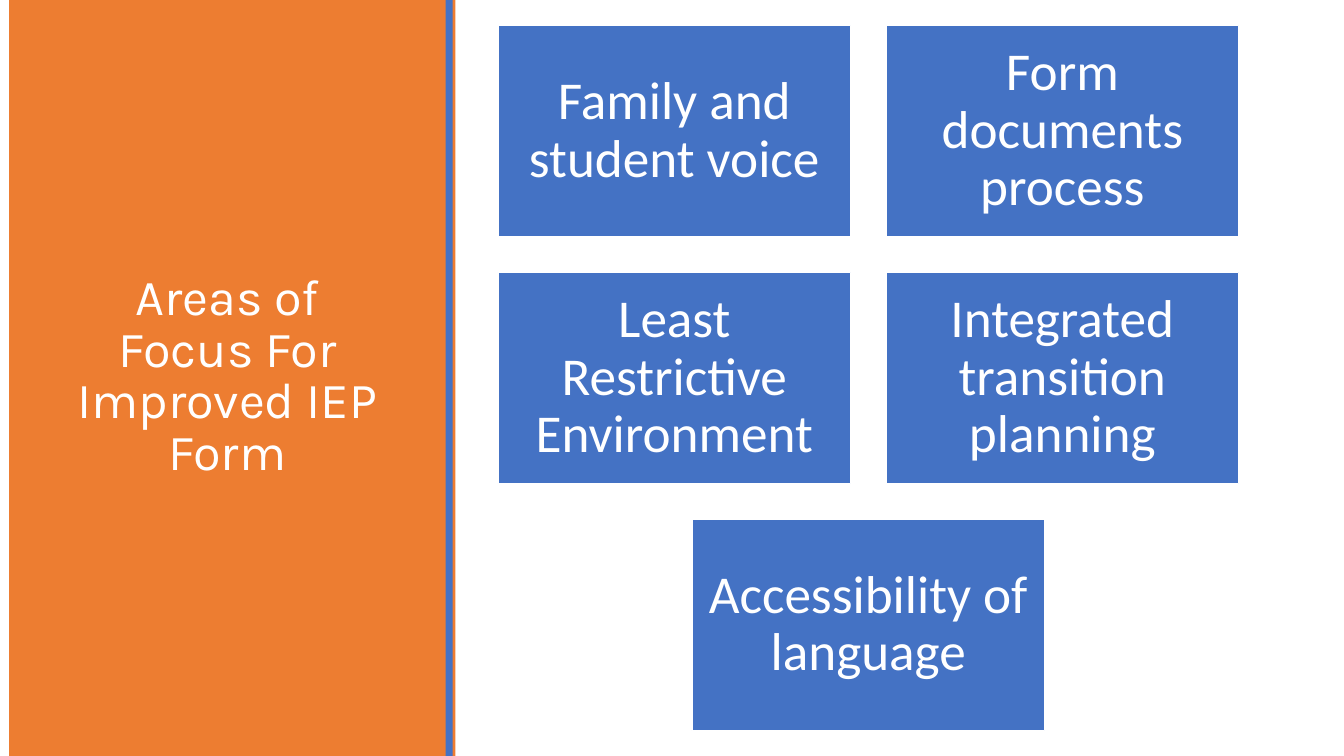
import pptx
import pptx.dml.color
import pptx.enum.shapes
import pptx.enum.text
import pptx.util

Cm, Pt = pptx.util.Cm, pptx.util.Pt

TITLE = "Areas of Focus For Improved IEP Form"
ROWS = [
    ["Family and student voice", "Form documents process"],
    ["Least Restrictive Environment", "Integrated transition planning"],
    ["Accessibility of language"],
]

THEME = {
    "panel": "ED7D31", "card": "4472C4", "white": "FFFFFF",
    "title font": "Karla", "title size": 36,
    "card font": "Calibri", "card size": 38,
}

WIDE, HIGH = 33.87, 19.05
LEFT, TOP = 12.55, 0.64
CARD_W, CARD_H, GAP = 8.89, 5.33, 0.89


def tint(name):
    return pptx.dml.color.RGBColor.from_string(THEME[name])


def add_rect(slide, x, y, w, h, fill, edge=None):
    rect = slide.shapes.add_shape(
        pptx.enum.shapes.MSO_SHAPE.RECTANGLE, Cm(x), Cm(y), Cm(w), Cm(h))
    rect.shadow.inherit = False
    rect.fill.solid()
    rect.fill.fore_color.rgb = tint(fill)
    if edge:
        rect.line.color.rgb = tint(edge)
        rect.line.width = Pt(1)
    else:
        rect.line.fill.background()
    return rect


def set_text(shape, text, role, pad_x, pad_y, pitch):
    """Fill a shape with centred white text in the style of its role."""
    frame = shape.text_frame
    frame.text = text
    frame.word_wrap = True
    frame.vertical_anchor = pptx.enum.text.MSO_ANCHOR.MIDDLE
    frame.margin_left = frame.margin_right = Cm(pad_x)
    frame.margin_top = frame.margin_bottom = Cm(pad_y)
    para = frame.paragraphs[0]
    para.alignment = pptx.enum.text.PP_ALIGN.CENTER
    para.line_spacing = pitch
    font = para.runs[0].font
    font.name = THEME[role + " font"]
    font.size = Pt(THEME[role + " size"])
    font.color.rgb = tint("white")


def add_cards(slide):
    """Lay the cards out in rows, each centred on the widest row."""
    most = max(len(row) for row in ROWS)
    for r, row in enumerate(ROWS):
        shift = (most - len(row)) * (CARD_W + GAP) / 2
        for c, text in enumerate(row):
            x = LEFT + shift + c * (CARD_W + GAP)
            y = TOP + r * (CARD_H + GAP)
            card = add_rect(slide, x, y, CARD_W, CARD_H, "card", "white")
            set_text(card, text, "card", 0.41, 0.41, 0.9)


def main():
    deck = pptx.Presentation()
    deck.slide_width, deck.slide_height = Cm(WIDE), Cm(HIGH)
    slide = deck.slides.add_slide(deck.slide_layouts[6])
    add_rect(slide, 0.23, 0, 11.25, HIGH, "panel")
    title = slide.shapes.add_textbox(Cm(1.45), Cm(1.5), Cm(8.56), Cm(16.03))
    set_text(title, TITLE, "title", 0.25, 0.13, 0.85)
    add_rect(slide, 11.23, 0, 0.18, HIGH, "card")
    add_cards(slide)
    deck.save("out.pptx")


if __name__ == "__main__":
    main()
